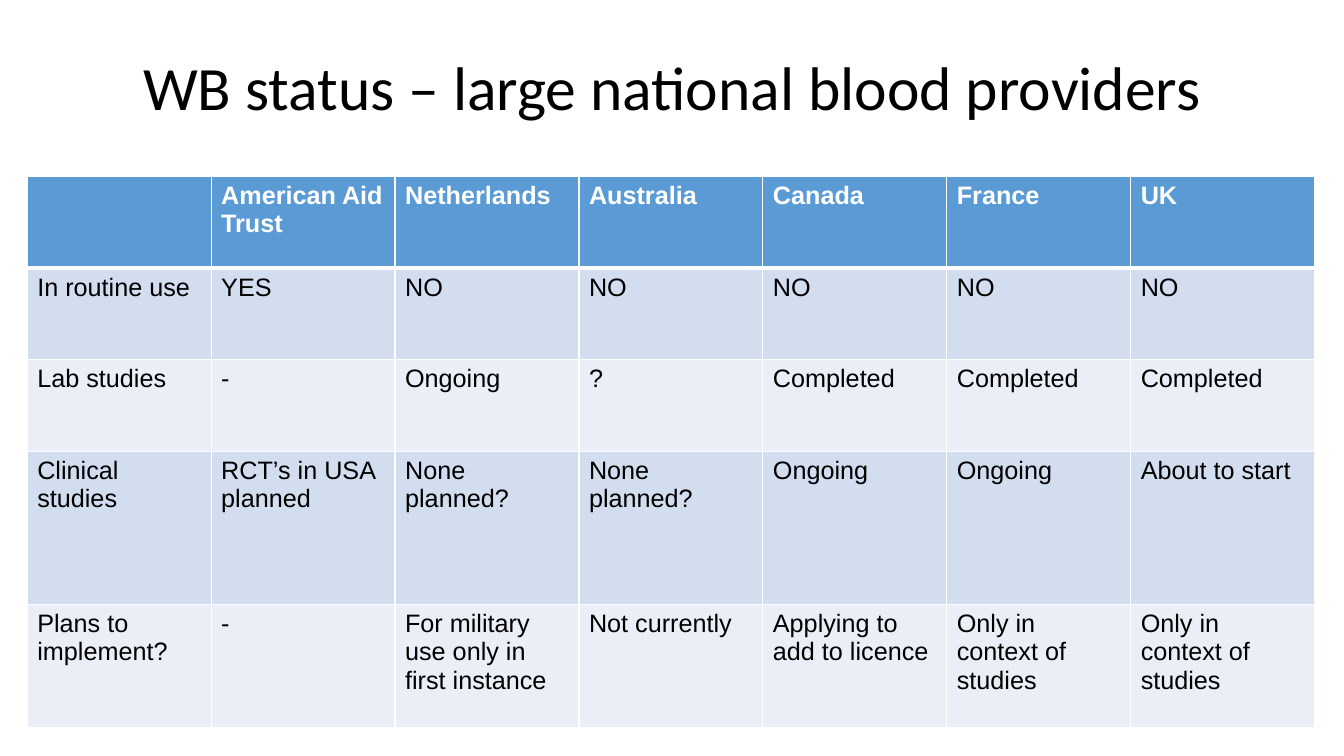
import pptx
import pptx.dml.color
import pptx.enum.text
import pptx.oxml.ns
import pptx.util
from lxml import etree
from pptx.util import Inches

WHITE = pptx.dml.color.RGBColor(0xFF, 0xFF, 0xFF)
BLACK = pptx.dml.color.RGBColor(0x00, 0x00, 0x00)
HEADER_BLUE = pptx.dml.color.RGBColor(0x5B, 0x9B, 0xD5)
BAND_DARK = pptx.dml.color.RGBColor(0xD2, 0xDE, 0xEF)
BAND_LIGHT = pptx.dml.color.RGBColor(0xEA, 0xEF, 0xF7)

TITLE = "WB status – large national blood providers"
STATUS = [
    ["", "American Aid Trust", "Netherlands", "Australia", "Canada", "France", "UK"],
    ["In routine use", "YES", "NO", "NO", "NO", "NO", "NO"],
    ["Lab studies", "-", "Ongoing", "?", "Completed", "Completed", "Completed"],
    ["Clinical studies", "RCT’s in USA planned", "None planned?", "None planned?",
     "Ongoing", "Ongoing", "About to start"],
    ["Plans to implement?", "-", "For military use only in first instance",
     "Not currently", "Applying to add to licence",
     "Only in context of studies", "Only in context of studies"],
]
ROW_HEIGHTS = [0.91, 0.91, 0.91, 1.52, 1.22]
TABLE_WIDTH = 12.77


def format_runs(paragraph, font_name, size, color, bold=False):
    for run in paragraph.runs:
        run.font.name = font_name
        run.font.size = pptx.util.Pt(size)
        run.font.color.rgb = color
        run.font.bold = bold


def add_title(slide):
    title = slide.shapes.title
    title.left, title.top = Inches(0.92), Inches(0.4)
    title.width, title.height = Inches(11.5), Inches(0.99)
    title.text_frame.text = TITLE
    title.text_frame.vertical_anchor = pptx.enum.text.MSO_ANCHOR.MIDDLE
    heading = title.text_frame.paragraphs[0]
    heading.alignment = pptx.enum.text.PP_ALIGN.CENTER
    heading.line_spacing = 0.9
    format_runs(heading, "Calibri", 44, BLACK)


def add_borders(cell, top, bottom):
    """Draw white cell borders; top and bottom are widths in points."""
    qn = pptx.oxml.ns.qn
    properties = cell._tc.get_or_add_tcPr()
    for side, width in (("L", 1), ("R", 1), ("T", top), ("B", bottom)):
        line = etree.SubElement(properties, qn(f"a:ln{side}"), w=str(pptx.util.Pt(width)))
        fill = etree.SubElement(line, qn("a:solidFill"))
        etree.SubElement(fill, qn("a:srgbClr"), val=str(WHITE))


def fill_cell(cell, text, row):
    is_header = row == 0
    add_borders(cell, top=3 if row == 1 else 1, bottom=3 if is_header else 1)
    cell.fill.solid()
    band = BAND_DARK if row % 2 else BAND_LIGHT
    cell.fill.fore_color.rgb = HEADER_BLUE if is_header else band
    if text:
        cell.text_frame.text = text
        format_runs(cell.text_frame.paragraphs[0], "Arial", 18,
                    WHITE if is_header else BLACK, is_header)


def add_status_table(slide):
    column_count = len(STATUS[0])
    table = slide.shapes.add_table(
        len(STATUS), column_count, Inches(0.27), Inches(1.75),
        Inches(TABLE_WIDTH), Inches(sum(ROW_HEIGHTS))).table
    for column in table.columns:
        column.width = Inches(TABLE_WIDTH / column_count)
    for row, texts in enumerate(STATUS):
        table.rows[row].height = Inches(ROW_HEIGHTS[row])
        for column, text in enumerate(texts):
            fill_cell(table.cell(row, column), text, row)


def main():
    presentation = pptx.Presentation()
    presentation.slide_width = Inches(13.33)
    presentation.slide_height = Inches(7.5)
    slide = presentation.slides.add_slide(presentation.slide_layouts.get_by_name("Title Only"))
    add_title(slide)
    add_status_table(slide)
    presentation.save("out.pptx")


if __name__ == "__main__":
    main()
